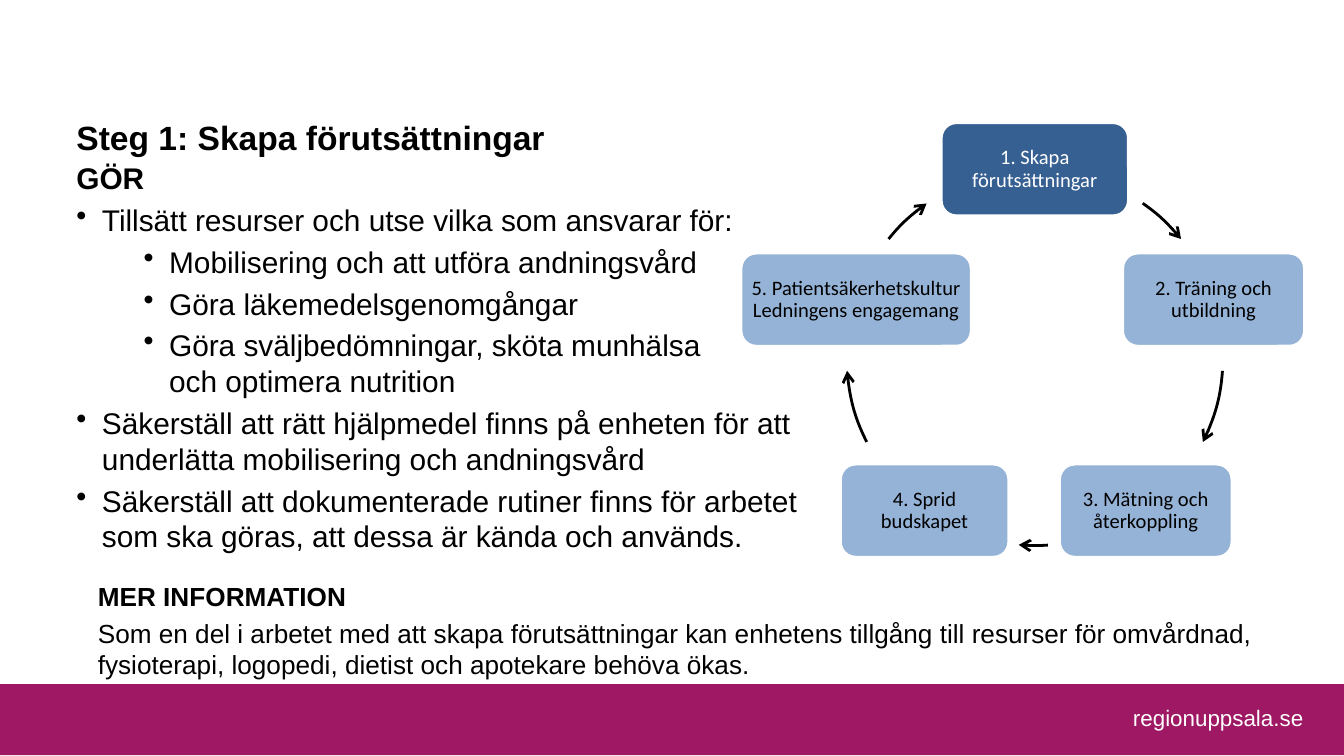
import lxml.etree
import pptx
import pptx.dml.color
import pptx.enum.shapes
import pptx.enum.text
import pptx.oxml.ns
import pptx.util

Inches = pptx.util.Inches
Pt = pptx.util.Pt
SHAPES = pptx.enum.shapes.MSO_SHAPE
ALIGN = pptx.enum.text.PP_ALIGN
ANCHOR = pptx.enum.text.MSO_ANCHOR

BLACK, WHITE = "000000", "FFFFFF"
ACTIVE, STEP, BAND = "376092", "95B3D7", "9E1863"

# Text, indent level (None for a heading without bullet)
ACTIONS = [
    ("GÖR", None),
    ("Tillsätt resurser och utse vilka som ansvarar för:", 0),
    ("Mobilisering och att utföra andningsvård", 1),
    ("Göra läkemedelsgenomgångar", 1),
    ("Göra sväljbedömningar, sköta munhälsa \voch optimera nutrition", 1),
    ("Säkerställ att rätt hjälpmedel finns på enheten för att \v"
     "underlätta mobilisering och andningsvård", 0),
    ("Säkerställ att dokumenterade rutiner finns för arbetet \v"
     "som ska göras, att dessa är kända och används.", 0),
]

# Text, left, top, width, fill, text colour
STEPS = [
    ("1. Skapa förutsättningar", 7, 0.91, 1.4, ACTIVE, WHITE),
    ("2. Träning och utbildning", 8.35, 1.88, 1.36, STEP, BLACK),
    ("3. Mätning och återkoppling", 7.88, 3.45, 1.29, STEP, BLACK),
    ("4. Sprid budskapet", 6.25, 3.45, 1.26, STEP, BLACK),
    ("5. Patientsäkerhetskultur Ledningens engagemang",
     5.51, 1.88, 1.72, STEP, BLACK),
]

# Start and end of each arrow, in degrees clockwise from the right
ARCS = [(305, 321), (4.1, 26.7), (86, 94.9), (153.3, 175.9), (219, 234.9)]


def color(value):
    return pptx.dml.color.RGBColor.from_string(value)


def add_bullet(para, level):
    props = para._p.get_or_add_pPr()
    props.set("marL", str(Inches(0.19 + 0.5 * level)))
    props.set("indent", str(-Inches(0.19)))
    bullet = lxml.etree.SubElement(props, pptx.oxml.ns.qn("a:buChar"))
    bullet.set("char", "•")


def write(para, text, size=16, font="Arial", ink=BLACK, bold=False,
          align=ALIGN.LEFT, spacing=None, before=0, level=None):
    para.text = text
    if level is not None:
        add_bullet(para, level)
        para.level = level
    para.alignment = align
    if spacing:
        para.line_spacing = spacing
    if before:
        para.space_before = Pt(before)
    for span in para.runs:
        span.font.size = Pt(size)
        span.font.name = font
        span.font.bold = bold
        span.font.color.rgb = color(ink)


def add_textbox(page, left, top, width, height, anchor=ANCHOR.TOP):
    box = page.shapes.add_textbox(Inches(left), Inches(top),
                                  Inches(width), Inches(height))
    frame = box.text_frame
    frame.word_wrap = True
    frame.vertical_anchor = anchor
    return frame


def add_filled(page, kind, left, top, width, height, fill):
    shape = page.shapes.add_shape(kind, Inches(left), Inches(top),
                                  Inches(width), Inches(height))
    shape.shadow.inherit = False
    shape.fill.solid()
    shape.fill.fore_color.rgb = color(fill)
    shape.line.fill.background()
    return shape


def add_step(page, text, left, top, width, fill, ink):
    shape = add_filled(page, SHAPES.ROUNDED_RECTANGLE,
                       left, top, width, 0.7, fill)
    shape.line.color.rgb = color(WHITE)
    shape.line.width = Pt(2)
    frame = shape.text_frame
    frame.word_wrap = True
    frame.vertical_anchor = ANCHOR.MIDDLE
    frame.margin_left = frame.margin_right = Inches(0.03)
    frame.margin_top = frame.margin_bottom = Inches(0.05)
    write(frame.paragraphs[0], text, size=11, font="Calibri", ink=ink,
          align=ALIGN.CENTER, spacing=0.9)


def add_arc_arrow(page, start, end):
    arc = page.shapes.add_shape(SHAPES.ARC, Inches(6.3), Inches(1.26),
                                Inches(2.8), Inches(2.8))
    arc.shadow.inherit = False
    # An angle is stored as 60000 per degree, and 100000 is one unit here
    arc.adjustments[0] = start * 0.6
    arc.adjustments[1] = end * 0.6
    arc.fill.background()
    arc.line.color.rgb = color(BLACK)
    arc.line.width = Pt(1.5)
    line = arc.line._get_or_add_ln()
    head = lxml.etree.SubElement(line, pptx.oxml.ns.qn("a:tailEnd"))
    head.set("type", "arrow")


def main():
    deck = pptx.Presentation()
    # Widescreen, 16:9
    deck.slide_width = Inches(10)
    deck.slide_height = Inches(10 * 9 / 16)
    page = deck.slides.add_slide(deck.slide_layouts[6])

    # Footer band
    add_filled(page, SHAPES.RECTANGLE, 0, 5.09, 10, 0.53, BAND)
    footer = add_textbox(page, 8.25, 5.09, 1.63, 0.5, ANCHOR.MIDDLE)
    write(footer.paragraphs[0], "regionuppsala.se", size=12, ink=WHITE,
          align=ALIGN.CENTER)

    # Title
    title = add_textbox(page, 0.47, 0.82, 5.11, 0.65)
    write(title.paragraphs[0], "Steg 1: Skapa förutsättningar",
          size=18, bold=True)

    # Actions
    actions = add_textbox(page, 0.47, 1.14, 6.19, 3.46)
    for index, (text, level) in enumerate(ACTIONS):
        para = actions.add_paragraph() if index else actions.paragraphs[0]
        write(para, text, bold=level is None, level=level,
              before=3.2 if index else 0)

    # Cycle of steps
    for step in STEPS:
        add_step(page, *step)
    for start, end in ARCS:
        add_arc_arrow(page, start, end)

    # More information
    more = add_textbox(page, 0.63, 4.27, 9.37, 1.07)
    write(more.paragraphs[0], "MER INFORMATION", size=14, bold=True)
    write(more.add_paragraph(),
          "Som en del i arbetet med att skapa förutsättningar kan enhetens "
          "tillgång till resurser för omvårdnad, fysioterapi, logopedi, "
          "dietist och apotekare behöva ökas.", size=14, before=2.8)

    deck.save("out.pptx")


if __name__ == "__main__":
    main()
